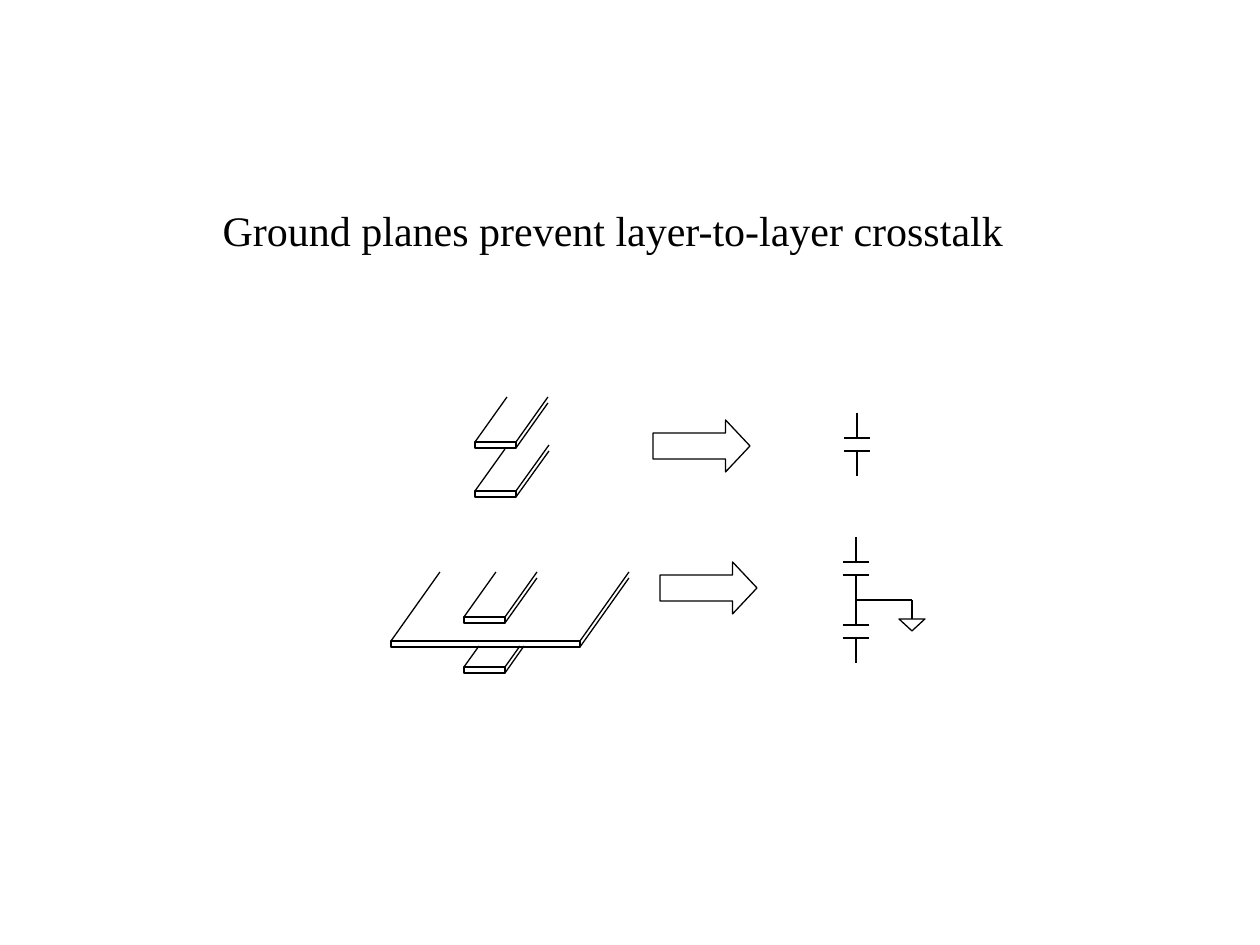
from pptx import Presentation
from pptx.dml.color import RGBColor
from pptx.enum.shapes import MSO_CONNECTOR as CONNECTOR, MSO_SHAPE as SHAPE
from pptx.enum.text import MSO_ANCHOR as ANCHOR, MSO_AUTO_SIZE as AUTO_SIZE, PP_ALIGN as ALIGN
from pptx.oxml.ns import qn
from pptx.util import Inches, Pt
from lxml.etree import SubElement

COLORS = {"ink": "000000", "paper": "FFFFFF"}
FONT = "Times New Roman"
PX_PER_INCH = 126
TRACE_WIDTH = 41
THICKNESS = 6
RUN_PER_RISE = 0.71
LEAD = 25
PLATE_GAP = 13
PLATE_HALF = 13
CAPACITOR_HEIGHT = 2 * LEAD + PLATE_GAP


def px(value):
    return round(Inches(value / PX_PER_INCH))


def color(name):
    return RGBColor.from_string(COLORS[name])


def style_line(line):
    line.color.rgb = color("ink")
    line.width = Pt(0.75)


def style_shape(shape):
    shape.shadow.inherit = False
    shape.fill.solid()
    shape.fill.fore_color.rgb = color("paper")
    style_line(shape.line)


def write_text(frame, text, size=24, ink="ink", align=ALIGN.LEFT):
    paragraph = frame.paragraphs[0]
    paragraph.alignment = align
    run = paragraph.add_run()
    run.text = text
    run.font.name = FONT
    run.font.size = Pt(size)
    run.font.color.rgb = color(ink)


def add_title(slide, text):
    title = slide.shapes.title
    title.left, title.top, title.width, title.height = map(px, (210, 198, 824, 63))
    frame = title.text_frame
    frame.word_wrap = False
    frame.auto_size = AUTO_SIZE.NONE
    frame.vertical_anchor = ANCHOR.TOP
    write_text(frame, text)


def add_line(slide, x1, y1, x2, y2):
    connector = slide.shapes.add_connector(CONNECTOR.STRAIGHT, *map(px, (x1, y1, x2, y2)))
    style_line(connector.line)
    SubElement(connector._element.spPr, qn("a:effectLst"))


def add_shape(slide, kind, left, top, width, height):
    shape = slide.shapes.add_shape(kind, *map(px, (left, top, width, height)))
    style_shape(shape)
    return shape


def add_plate(slide, left, top, width, left_rise, right_rise, lower_rise):
    add_shape(slide, SHAPE.RECTANGLE, left, top, width, THICKNESS)
    right = left + width
    edges = (
        (right, top, right_rise),
        (left, top, left_rise),
        (right, top + THICKNESS, lower_rise),
    )
    for x, y, rise in edges:
        add_line(slide, x, y, x + round(rise * RUN_PER_RISE), y - rise)


def add_arrow(slide, left, top):
    arrow = add_shape(slide, SHAPE.RIGHT_ARROW, left, top, 97, 52)
    arrow.adjustments[0] = 0.5
    arrow.adjustments[1] = 0.47


def add_capacitor(slide, x, top):
    upper = top + LEAD
    lower = upper + PLATE_GAP
    add_line(slide, x, top, x, upper)
    for y in (upper, lower):
        add_line(slide, x - PLATE_HALF, y, x + PLATE_HALF, y)
    add_line(slide, x, lower, x, lower + LEAD)


def add_ground(slide, x, y, node_x):
    tip_top = y + 19
    builder = slide.shapes.build_freeform(px(x - 13), px(tip_top))
    builder.add_line_segments([(px(x + 13), px(tip_top)), (px(x), px(tip_top + 12))])
    style_shape(builder.convert_to_shape())
    add_line(slide, node_x, y, x, y)
    add_line(slide, x, y, x, tip_top)


def main():
    presentation = Presentation()
    presentation.slide_width = Inches(10)
    presentation.slide_height = Inches(7.5)
    slide = presentation.slides.add_slide(presentation.slide_layouts[5])
    add_title(slide, "Ground planes prevent layer-to-layer crosstalk")

    add_plate(slide, 475, 442, TRACE_WIDTH, 45, 45, 45)
    add_plate(slide, 475, 491, TRACE_WIDTH, 42, 46, 46)
    add_plate(slide, 391, 641, 189, 69, 69, 69)
    add_plate(slide, 464, 617, TRACE_WIDTH, 45, 45, 45)
    add_plate(slide, 464, 667, TRACE_WIDTH, 21, 21, 27)

    add_arrow(slide, 660, 562)
    add_arrow(slide, 653, 420)

    add_capacitor(slide, 857, 413)
    shielded_x, shielded_top = 856, 537
    middle = shielded_top + CAPACITOR_HEIGHT
    for top in (shielded_top, middle):
        add_capacitor(slide, shielded_x, top)
    add_ground(slide, 912, middle, shielded_x)

    presentation.save("out.pptx")


if __name__ == "__main__":
    main()
